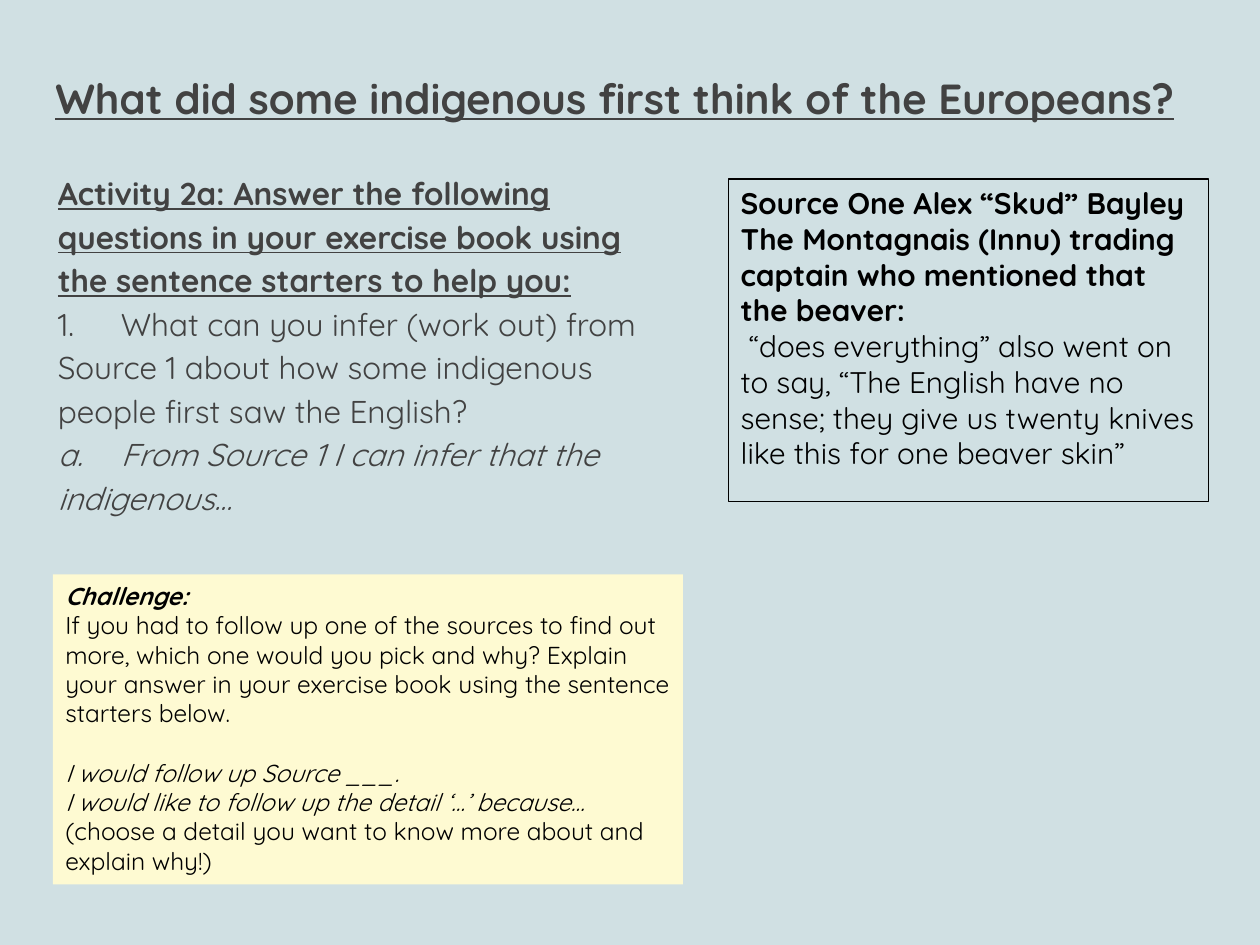
from dataclasses import dataclass

from pptx import Presentation
from pptx.dml.color import RGBColor
from pptx.enum.shapes import MSO_SHAPE
from pptx.enum.text import MSO_ANCHOR, PP_ALIGN
from pptx.util import Inches, Pt


@dataclass(frozen=True)
class Theme:
    """Hold the colours, font and type sizes of the slide."""
    background: str = "D0E0E3"
    heading: str = "424242"
    ink: str = "000000"
    note: str = "FEFAD2"
    font: str = "Quicksand"
    title_size: int = 24
    activity_size: int = 18
    source_size: int = 17
    challenge_size: int = 14


THEME = Theme()


def rgb(code):
    """Turn a hex code into a colour."""
    return RGBColor.from_string(code)


def write(paragraph, text, *, size, color, bold=False, italic=False, underline=False):
    """Add a formatted run to a paragraph."""
    run = paragraph.add_run()
    run.text = text
    font = run.font
    font.name, font.size = THEME.font, Pt(size)
    font.color.rgb = rgb(color)
    font.bold, font.italic, font.underline = bold, italic, underline


def fill_frame(frame, paragraphs, *, size, color, line_spacing=None, indent=0, gaps=None):
    """Write paragraphs, each a list of text and format pairs."""
    for index, parts in enumerate(paragraphs):
        paragraph = frame.add_paragraph() if index else frame.paragraphs[0]
        paragraph.alignment = PP_ALIGN.LEFT
        if line_spacing:
            paragraph.line_spacing = line_spacing
        if indent:
            properties = paragraph._p.get_or_add_pPr()
            properties.set("marL", str(Inches(indent)))
            properties.set("indent", "0")
        if gaps and index in gaps:
            paragraph.space_before = Pt(gaps[index])
        for text, style in parts:
            write(paragraph, text, size=size, color=color, **style)


def add_text(slide, left, top, width, height, *, anchor=MSO_ANCHOR.TOP, bottom=0.1):
    """Add a wrapping text box and return its frame."""
    box = slide.shapes.add_textbox(Inches(left), Inches(top), Inches(width), Inches(height))
    frame = box.text_frame
    frame.word_wrap = True
    frame.vertical_anchor = anchor
    frame.margin_left = frame.margin_right = frame.margin_top = Inches(0.1)
    frame.margin_bottom = Inches(bottom)
    return frame


def add_panel(slide, left, top, width, height, *, fill=None, line=None):
    """Add a rectangle and return its text frame."""
    panel = slide.shapes.add_shape(
        MSO_SHAPE.RECTANGLE, Inches(left), Inches(top), Inches(width), Inches(height))
    panel.shadow.inherit = False
    if fill:
        panel.fill.solid()
        panel.fill.fore_color.rgb = rgb(fill)
    else:
        panel.fill.background()
    if line:
        panel.line.color.rgb = rgb(line)
        panel.line.width = Pt(0.75)
    else:
        panel.line.fill.background()
    frame = panel.text_frame
    frame.word_wrap = True
    frame.vertical_anchor = MSO_ANCHOR.TOP
    return frame


def main():
    """Build the slide and save it."""
    deck = Presentation()
    deck.slide_width, deck.slide_height = Inches(10), Inches(7.5)
    slide = deck.slides.add_slide(deck.slide_layouts[6])
    slide.background.fill.solid()
    slide.background.fill.fore_color.rgb = rgb(THEME.background)

    plain, bold, italic = {}, {"bold": True}, {"italic": True}
    heading = {"bold": True, "underline": True}

    title = add_text(slide, 0.34, 0.28, 9.35, 1.1, anchor=MSO_ANCHOR.BOTTOM, bottom=0.5)
    fill_frame(title, [
        [("What did some indigenous first think of the Europeans?", heading)],
    ], size=THEME.title_size, color=THEME.heading)

    activity = add_text(slide, 0.19, 1.24, 5.08, 4.3)
    fill_frame(activity, [
        [("Activity 2a: Answer the following questions in your exercise book "
          "using the sentence starters to help you:", heading)],
        [("1.\tWhat can you infer (work out) from Source 1 about how some "
          "indigenous people first saw the English?", plain)],
        [("a.\tFrom Source 1 I can infer that the indigenous…", italic)],
    ], size=THEME.activity_size, color=THEME.heading, line_spacing=1.15, indent=0.17)

    challenge = add_panel(slide, 0.42, 4.56, 5, 2.46, fill=THEME.note)
    fill_frame(challenge, [
        [("Challenge:", {**bold, **italic})],
        [("If you had to follow up one of the sources to find out more, which one "
          "would you pick and why? Explain your answer in your exercise book using "
          "the sentence starters below.", plain)],
        [("I would follow up Source ___.", italic)],
        [("I would like to follow up the detail ‘…’ because… ", italic),
         ("(choose a detail you want to know more about and explain why!)", plain)],
    ], size=THEME.challenge_size, color=THEME.ink, gaps={2: 17})

    source = add_panel(slide, 5.78, 1.42, 3.81, 2.56, line=THEME.ink)
    fill_frame(source, [
        [("Source One Alex “Skud” Bayley The Montagnais (Innu) trading captain "
          "who mentioned that the beaver:", bold)],
        [(" “does everything” also went on to say, “The English have no sense; "
          "they give us twenty knives like this for one beaver skin”", plain)],
    ], size=THEME.source_size, color=THEME.ink)

    deck.save("out.pptx")


if __name__ == "__main__":
    main()
